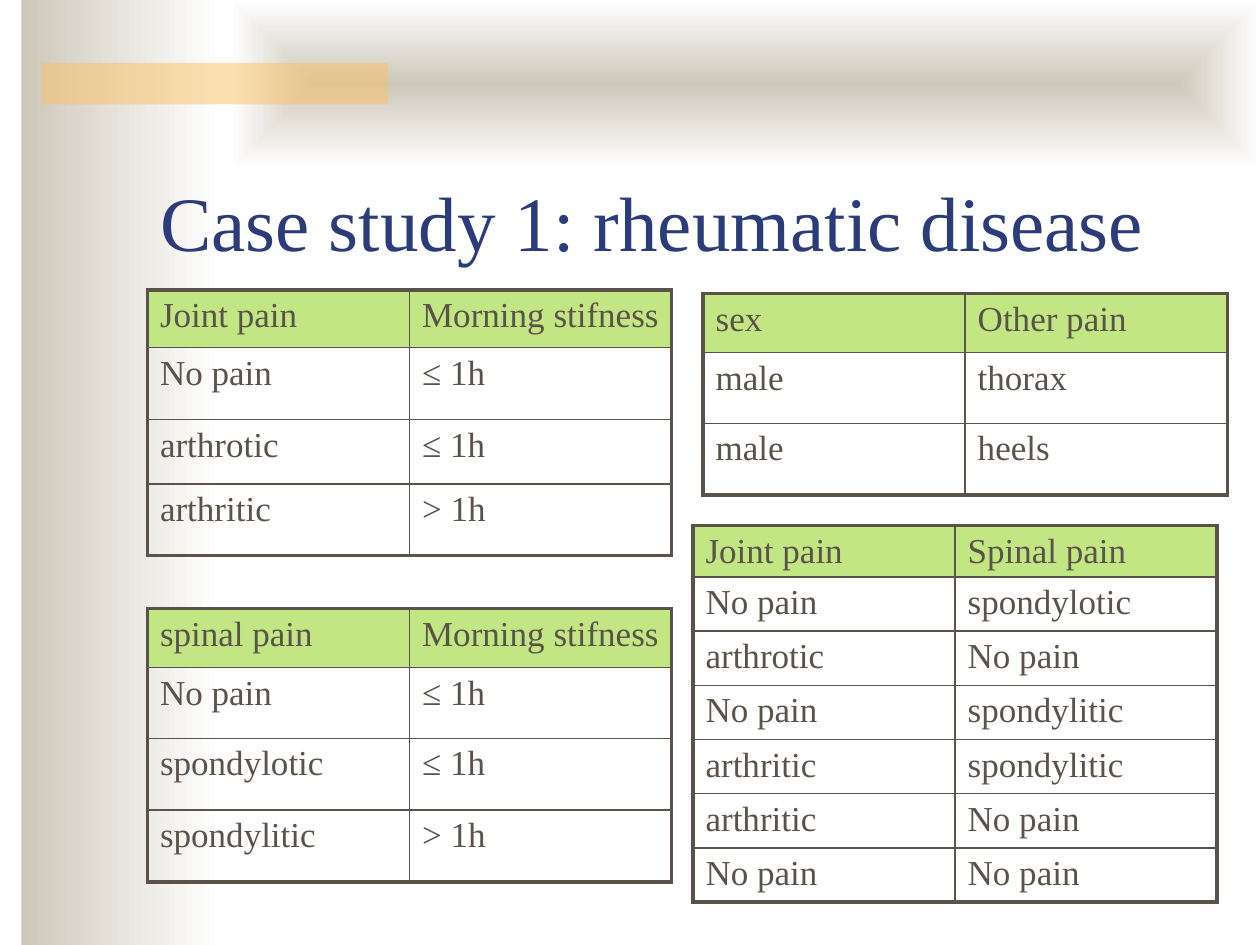
"""Build the rheumatic disease case study slide with its four symptom tables."""
import pptx
import pptx.dml.color
import pptx.enum.shapes
import pptx.enum.text
import pptx.oxml
import pptx.oxml.ns
import pptx.util

Inches = pptx.util.Inches
Pt = pptx.util.Pt
RGBColor = pptx.dml.color.RGBColor
qn = pptx.oxml.ns.qn

NAVY = RGBColor(0x2A, 0x3D, 0x7A)
BROWN = RGBColor(0x5B, 0x52, 0x49)
GREEN = RGBColor(0xC3, 0xE6, 0x84)
SAND = RGBColor(0xCE, 0xC8, 0xBA)
ORANGE = RGBColor(0xFA, 0xC1, 0x64)
WHITE = RGBColor(0xFF, 0xFF, 0xFF)
FONT = "Times New Roman"
COL_WIDTH = 2.08
OUTER, INNER = 2.25, 1

TITLE = "Case study 1: rheumatic disease"
TABLES = [
    {"at": (1.17, 2.3), "heights": [0.46, 0.57, 0.51, 0.57],
     "rows": [("Joint pain", "Morning stifness"), ("No pain", "≤ 1h"),
              ("arthrotic", "≤ 1h"), ("arthritic", "> 1h")]},
    {"at": (1.17, 4.83), "heights": [0.47, 0.56, 0.57, 0.57],
     "rows": [("spinal pain", "Morning stifness"), ("No pain", "≤ 1h"),
              ("spondylotic", "≤ 1h"), ("spondylitic", "> 1h")]},
    {"at": (5.58, 2.33), "heights": [0.47, 0.56, 0.57],
     "rows": [("sex", "Other pain"), ("male", "thorax"), ("male", "heels")]},
    {"at": (5.5, 4.17), "heights": [0.35] + [0.43] * 6,
     "rows": [("Joint pain", "Spinal pain"), ("No pain", "spondylotic"),
              ("arthrotic", "No pain"), ("No pain", "spondylitic"),
              ("arthritic", "spondylitic"), ("arthritic", "No pain"),
              ("No pain", "No pain")]},
]


def a_element(xml):
    return pptx.oxml.parse_xml(xml.replace(" ", f' {pptx.oxml.ns.nsdecls("a")} ', 1))


def style_run(p, size, color):
    font = p.runs[0].font
    font.name, font.size, font.color.rgb = FONT, Pt(size), color


def add_rect(s, *box):
    sp = s.shapes.add_shape(pptx.enum.shapes.MSO_SHAPE.RECTANGLE, *map(Inches, box))
    sp.shadow.inherit = False
    sp.line.fill.background()
    return sp


def fade(sp):
    sp.fill.gradient()
    sp.fill.gradient_angle = 0
    for stop, color in zip(sp.fill.gradient_stops, (SAND, WHITE)):
        stop.color.rgb = color


def add_backdrop(s):
    side = add_rect(s, 0.17, 0, 1.58, 7.5)
    fade(side)
    banner = add_rect(s, 1.83, 0, 8.17, 1.33)
    fade(banner)
    lin = banner._element.spPr.find(qn("a:gradFill")).find(qn("a:lin"))
    lin.getparent().replace(lin, a_element(
        '<a:path path="shape"><a:fillToRect l="50000" t="50000" r="50000" b="50000"/></a:path>'))
    bar = add_rect(s, 0.33, 0.5, 2.75, 0.33)
    bar.fill.solid()
    bar.fill.fore_color.rgb = ORANGE
    bar._element.spPr.find(qn("a:solidFill"))[0].append(a_element('<a:alpha val="50000"/>'))
    for i, sp in enumerate((side, banner, bar)):
        s.shapes._spTree.insert(2 + i, sp._element)


def add_title(s):
    sp = s.shapes.title
    sp.left, sp.top, sp.width, sp.height = map(Inches, (1.17, 0.92, 8.5, 1.25))
    tf = sp.text_frame
    tf.text = TITLE
    tf.word_wrap = True
    tf.auto_size = pptx.enum.text.MSO_AUTO_SIZE.NONE
    tf.vertical_anchor = pptx.enum.text.MSO_ANCHOR.BOTTOM
    tf.paragraphs[0].alignment = pptx.enum.text.PP_ALIGN.LEFT
    style_run(tf.paragraphs[0], 44, NAVY)


def set_borders(cell, widths):
    tc_pr = cell._tc.get_or_add_tcPr()
    for i, (side, width) in enumerate(widths.items()):
        tc_pr.insert(i, a_element(
            f'<a:ln{side} w="{Pt(width)}"><a:solidFill><a:srgbClr val="{BROWN}"/>'
            f'</a:solidFill></a:ln{side}>'))


def add_symptom_table(s, at, heights, rows):
    n_rows, n_cols = len(rows), len(rows[0])
    size = COL_WIDTH * n_cols, sum(heights)
    table = s.shapes.add_table(n_rows, n_cols, *map(Inches, at + size)).table
    table.first_row = table.horz_banding = False
    for col in table.columns:
        col.width = Inches(COL_WIDTH)
    for r, (height, texts) in enumerate(zip(heights, rows)):
        table.rows[r].height = Inches(height)
        for c, text in enumerate(texts):
            cell = table.cell(r, c)
            cell.text_frame.text = text
            style_run(cell.text_frame.paragraphs[0], 20, BROWN)
            if r == 0:
                cell.fill.solid()
                cell.fill.fore_color.rgb = GREEN
            else:
                cell.fill.background()
            edges = {"L": c == 0, "R": c == n_cols - 1, "T": r == 0, "B": r == n_rows - 1}
            set_borders(cell, {k: OUTER if edge else INNER for k, edge in edges.items()})


def main():
    prs = pptx.Presentation()
    prs.slide_width, prs.slide_height = Inches(10), Inches(7.5)
    s = prs.slides.add_slide(prs.slide_layouts[5])
    add_backdrop(s)
    add_title(s)
    for table in TABLES:
        add_symptom_table(s, **table)
    prs.save("out.pptx")


if __name__ == "__main__":
    main()
